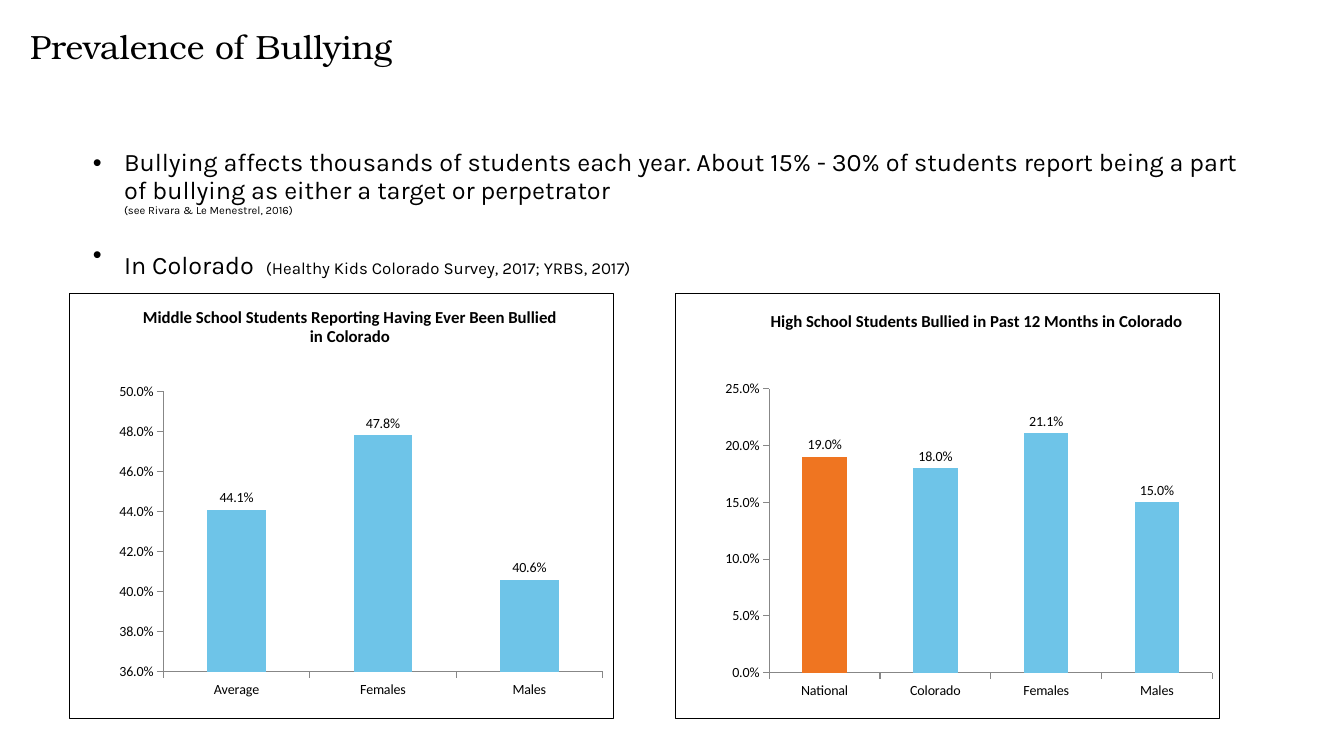
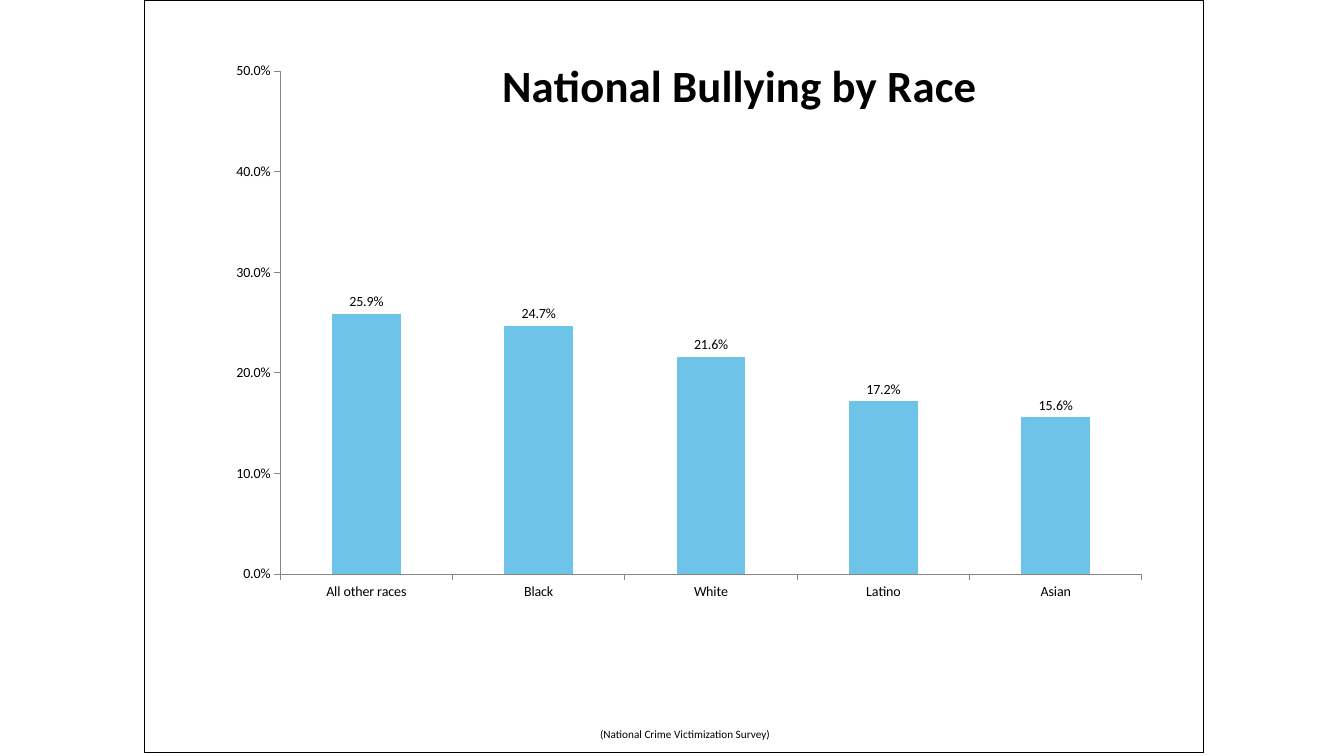
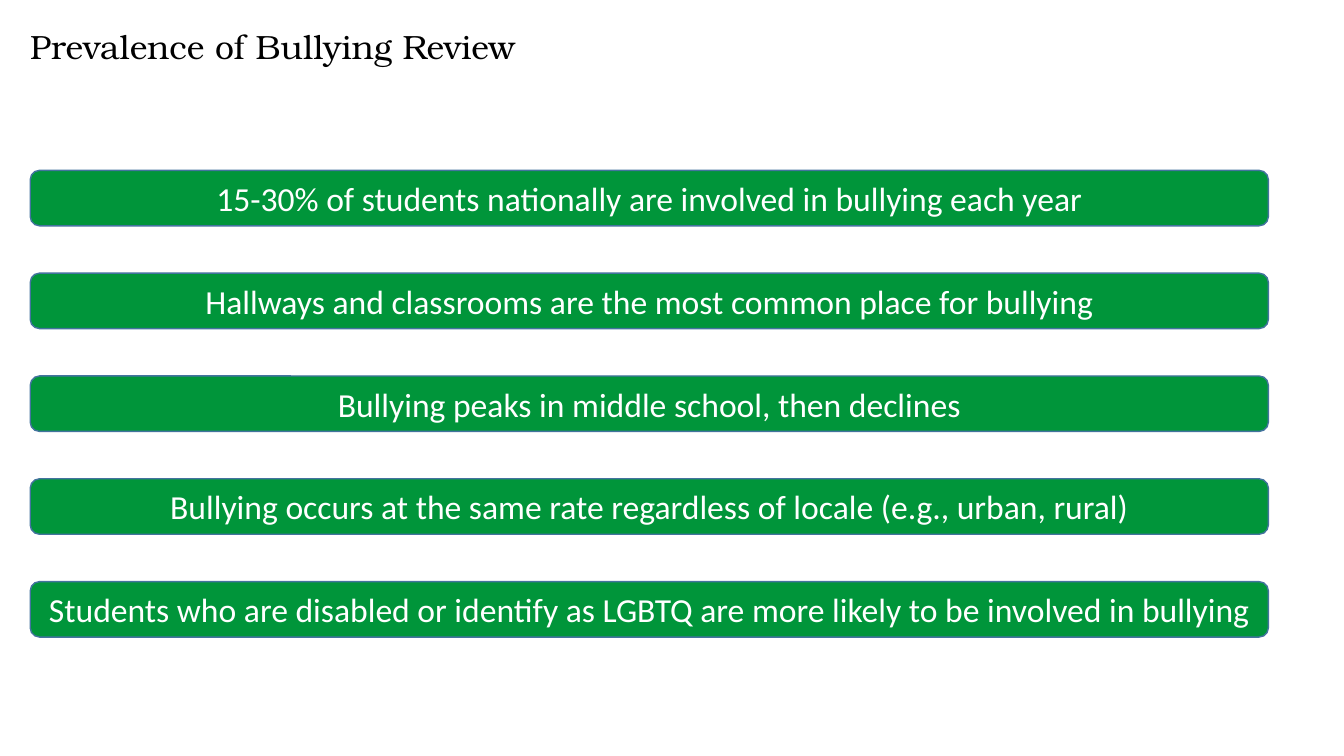
"""Build three slides on the prevalence of bullying."""
import dataclasses

import pptx
import pptx.chart.data
import pptx.dml.color
import pptx.enum.chart
import pptx.enum.shapes
import pptx.enum.text
import pptx.oxml
import pptx.oxml.ns
import pptx.util

Inches = pptx.util.Inches
Pt = pptx.util.Pt
qn = pptx.oxml.ns.qn
ALIGN = pptx.enum.text.PP_ALIGN
ANCHOR = pptx.enum.text.MSO_ANCHOR

COLORS = {"black": "000000", "white": "FFFFFF", "sky": "6EC4E8", "orange": "EF7521",
          "green": "00953A", "edge": "43739E", "axis": "878787"}
FONTS = {"title": "TeX Gyre Bonum", "body": "Karla", "plain": "Calibri"}


@dataclasses.dataclass
class Graph:
    """Hold what one column chart shows and where it sits."""
    box: tuple[float, float, float, float]
    title: str
    size: int
    spot: tuple[float, float]
    plot: tuple[float, float, float, float]
    scale: tuple[float, float, float]
    data: dict[str, float]
    accent: int | None = None


GRAPHS = [
    Graph((0.68, 2.91, 5.41, 4.22),
          "Middle School Students Reporting Having Ever Been Bullied in Colorado", 12,
          (0.13, 0.02), (0.173, 0.23, 0.807, 0.661), (0.36, 0.5, 0.02),
          {"Average": 0.441, "Females": 0.478, "Males": 0.406}),
    Graph((6.69, 2.91, 5.41, 4.22),
          "High School Students Bullied in Past 12 Months in Colorado", 12,
          (0.17, 0.03), (0.173, 0.224, 0.814, 0.669), (0, 0.25, 0.05),
          {"National": 0.19, "Colorado": 0.18, "Females": 0.211, "Males": 0.15}, 0),
    Graph((1.43, 0, 10.51, 7.47), "National Bullying by Race", 32,
          (0.33, 0.06), (0.128, 0.094, 0.814, 0.669), (0, 0.5, 0.1),
          {"All other races": 0.259, "Black": 0.247, "White": 0.216,
           "Latino": 0.172, "Asian": 0.156}),
]
POINTS = [
    [[("Bullying affects thousands of students each year. About 15% - 30% of students "
       "report being a part of bullying as either a target or perpetrator ", 18)],
     [("(see Rivara & Le Menestrel, 2016)", 8)]],
    [[("In Colorado", 18), (" ", 36),
      ("(Healthy Kids Colorado Survey, 2017; YRBS, 2017)", 12)]],
]
FACTS = [
    "15-30% of students nationally are involved in bullying each year",
    "Hallways and classrooms are the most common place for bullying",
    "Bullying peaks in middle school, then declines",
    "Bullying occurs at the same rate regardless of locale (e.g., urban, rural)",
    "Students who are disabled or identify as LGBTQ are more likely to be involved in bullying",
]


def color(name: str) -> pptx.dml.color.RGBColor:
    """Return the named colour."""
    return pptx.dml.color.RGBColor.from_string(COLORS[name])


def style(font, face: str, size: float, tint: str = "black") -> None:
    """Set face, size and colour of a font."""
    font.name = FONTS[face]
    font.size = Pt(size)
    font.color.rgb = color(tint)


def place(shape, left: float, top: float, width: float, height: float):
    """Move a placeholder and return its text frame without insets."""
    shape.left, shape.top = Inches(left), Inches(top)
    shape.width, shape.height = Inches(width), Inches(height)
    frame = shape.text_frame
    frame.margin_left = frame.margin_right = frame.margin_top = frame.margin_bottom = 0
    frame.word_wrap = True
    frame.auto_size = pptx.enum.text.MSO_AUTO_SIZE.NONE
    frame.vertical_anchor = ANCHOR.TOP
    return frame


def add_title(slide, text: str) -> None:
    """Fill the title placeholder."""
    par = place(slide.shapes.title, 0.3, 0.3, 6.37, 0.78).paragraphs[0]
    par.text = text
    par.alignment = ALIGN.LEFT
    par.line_spacing = 0.9
    style(par.font, "title", 24)


def add_points(slide) -> None:
    """Fill the body placeholder with bullets."""
    frame = place(slide.placeholders[1], 0.92, 1.49, 11.5, 1.31)
    for i, lines in enumerate(POINTS):
        par = frame.add_paragraph() if i else frame.paragraphs[0]
        par.line_spacing = 0.9
        par.space_before = Pt(10 if i else 0)
        props = par._p.get_or_add_pPr()
        props.set("marL", str(Inches(0.31)))
        props.set("indent", str(-Inches(0.31)))
        bullet = props.makeelement(qn("a:buChar"), {"char": "•"})
        props.append(bullet)
        style(par.font, "body", 18)
        for j, line in enumerate(lines):
            if j:
                par.add_line_break()
            for text, size in line:
                run = par.add_run()
                run.text = text
                run.font.size = Pt(size)


def set_layout(node, index: int, spot: tuple[float, ...], inner: bool = False) -> None:
    """Give a chart part a fixed place, in fractions of the chart."""
    for old in node.findall(qn("c:layout")):
        node.remove(old)
    marks = '<c:layoutTarget val="inner"/>' if inner else ""
    marks += '<c:xMode val="edge"/><c:yMode val="edge"/>'
    marks += "".join(f'<c:{key} val="{val}"/>' for key, val in zip("xywh", spot))
    node.insert(index, pptx.oxml.parse_xml(
        f'<c:layout {pptx.oxml.ns.nsdecls("c")}><c:manualLayout>{marks}'
        '</c:manualLayout></c:layout>'))


def add_graph(slide, graph: Graph) -> None:
    """Draw one framed column chart."""
    kinds = pptx.enum.chart
    data = pptx.chart.data.CategoryChartData(number_format="0.0%")
    data.categories = list(graph.data)
    data.add_series("Series 1", list(graph.data.values()))
    chart = slide.shapes.add_chart(
        kinds.XL_CHART_TYPE.COLUMN_CLUSTERED, *map(Inches, graph.box), data).chart
    style(chart.font, "plain", 10)
    chart.has_legend = False

    chart.has_title = True
    par = chart.chart_title.text_frame.paragraphs[0]
    par.text = graph.title
    style(par.font, "plain", graph.size)
    par.font.bold = True
    set_layout(chart.chart_title._element, 1, graph.spot)

    root = chart._chartSpace
    set_layout(root.chart.plotArea, 0, graph.plot, True)
    root.chart.addnext(pptx.oxml.parse_xml(
        f'<c:spPr {pptx.oxml.ns.nsdecls("c", "a")}><a:solidFill><a:srgbClr '
        f'val="{COLORS["white"]}"/></a:solidFill><a:ln w="{Pt(0.75)}"><a:solidFill>'
        f'<a:srgbClr val="{COLORS["black"]}"/></a:solidFill></a:ln></c:spPr>'))

    for axis in (chart.category_axis, chart.value_axis):
        axis.has_major_gridlines = False
        axis.major_tick_mark = kinds.XL_TICK_MARK.OUTSIDE
        axis.minor_tick_mark = kinds.XL_TICK_MARK.NONE
        axis.format.line.color.rgb = color("axis")
        axis.format.line.width = Pt(0.75)
    axis = chart.value_axis
    axis.minimum_scale, axis.maximum_scale, axis.major_unit = graph.scale
    axis.tick_labels.number_format = "0.0%"
    axis.tick_labels.number_format_is_linked = False

    plot = chart.plots[0]
    plot.gap_width = 150
    plot.vary_by_categories = False
    plot.has_data_labels = True
    labels = plot.data_labels
    labels.show_value = True
    labels.number_format = "0.0%"
    labels.number_format_is_linked = False
    labels.position = kinds.XL_LABEL_POSITION.OUTSIDE_END
    style(labels.font, "plain", 10)
    bars = plot.series[0]
    bars.format.fill.solid()
    bars.format.fill.fore_color.rgb = color("sky")
    if graph.accent is not None:
        fill = bars.points[graph.accent].format.fill
        fill.solid()
        fill.fore_color.rgb = color("orange")


def add_source(slide, text: str) -> None:
    """Add the centred source line at the foot."""
    box = slide.shapes.add_textbox(Inches(1.92), Inches(7.17), Inches(9.75), Inches(0.29))
    box.text_frame.word_wrap = True
    par = box.text_frame.paragraphs[0]
    par.text = text
    par.alignment = ALIGN.CENTER
    style(par.font, "plain", 8)


def add_fact(slide, top: float, text: str) -> None:
    """Draw one green bar with its text."""
    bar = slide.shapes.add_shape(
        pptx.enum.shapes.MSO_SHAPE.ROUNDED_RECTANGLE,
        Inches(0.3), Inches(top), Inches(12.28), Inches(0.55))
    bar.shadow.inherit = False
    bar.fill.solid()
    bar.fill.fore_color.rgb = color("green")
    bar.line.color.rgb = color("edge")
    bar.line.width = Pt(1)
    bar.text_frame.word_wrap = True
    bar.text_frame.vertical_anchor = ANCHOR.MIDDLE
    par = bar.text_frame.paragraphs[0]
    par.text = text
    par.alignment = ALIGN.CENTER
    style(par.font, "plain", 24, "white")


def main() -> None:
    """Build and save the deck."""
    deck = pptx.Presentation()
    deck.slide_width, deck.slide_height = Inches(13.33), Inches(7.5)
    rates, race, review = [
        deck.slides.add_slide(deck.slide_layouts[i]) for i in (1, 6, 5)]

    add_title(rates, "Prevalence of Bullying")
    add_points(rates)
    for graph in GRAPHS[:2]:
        add_graph(rates, graph)

    add_graph(race, GRAPHS[2])
    add_source(race, "(National Crime Victimization Survey)")

    add_title(review, "Prevalence of Bullying Review")
    for i, fact in enumerate(FACTS):
        add_fact(review, 1.69 + 1.02 * i, fact)

    deck.save("out.pptx")


if __name__ == "__main__":
    main()
